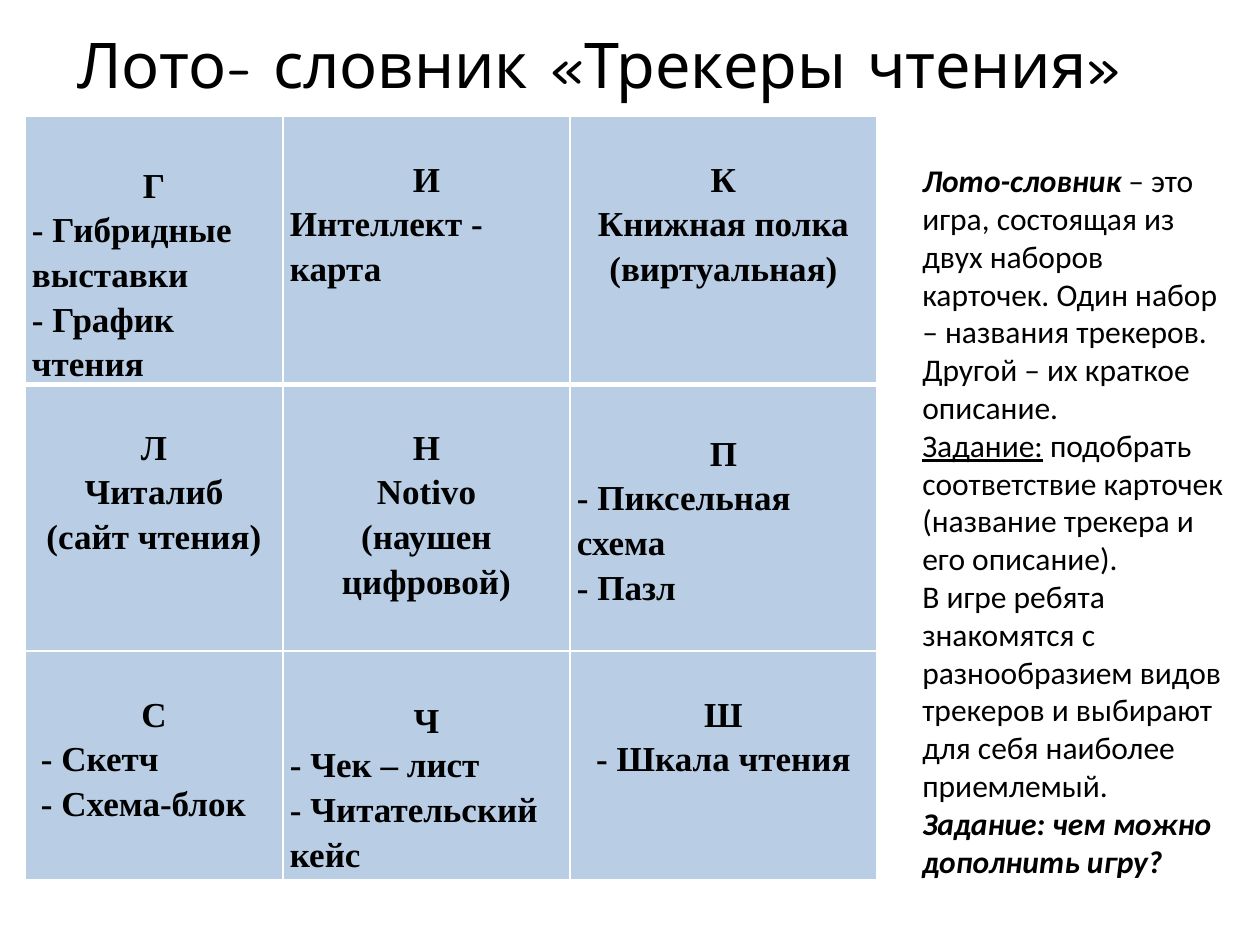
"""Builds the reading-tracker lotto slide with a word table and game rules."""
from lxml import etree
from pptx import Presentation
from pptx.dml import color
from pptx.enum import text
from pptx.oxml import ns
from pptx.util import Emu, Pt

SCALE = 914400 / 126
LEFT, CENTER = text.PP_ALIGN.LEFT, text.PP_ALIGN.CENTER
HIGH, LOW = 39, 45
COLUMNS = [258, 287, 307]
ROWS = [268, 267, 229]
WORDS = [
    [
        ("Г", ["- Гибридные выставки", "- График чтения"], LEFT, LOW, 0),
        ("И", ["Интеллект - карта"], LEFT, HIGH, 0),
        ("К", ["Книжная полка (виртуальная)"], CENTER, HIGH, 0),
    ],
    [
        ("Л", ["Читалиб", "(сайт чтения)"], CENTER, HIGH, 0),
        ("Н", ["Notivo", "(наушен цифровой)"], CENTER, HIGH, 0),
        ("П", ["- Пиксельная схема", "- Пазл"], LEFT, LOW, 0),
    ],
    [
        ("С", ["- Скетч", "- Схема-блок"], LEFT, HIGH, 9),
        ("Ч", ["- Чек – лист", "- Читательский кейс"], LEFT, LOW, 0),
        ("Ш", ["- Шкала чтения"], CENTER, HIGH, 0),
    ],
]
STRONG = {"bold": True, "italic": True}
RULES = [
    [
        ("Лото-словник", STRONG),
        (" – это игра, состоящая из двух наборов карточек. Один набор – "
         "названия трекеров. Другой – их краткое описание.", {}),
    ],
    [
        ("Задание:", {"underline": True}),
        (" подобрать соответствие карточек (название трекера и его описание).", {}),
    ],
    [("В игре ребята знакомятся с разнообразием видов трекеров и выбирают "
      "для себя наиболее приемлемый.", {})],
    [("Задание: чем можно дополнить игру?", STRONG)],
]


def px(length):
    """Turn pixels into EMU."""
    return Emu(round(length * SCALE))


def rgb(value):
    """Turn a hex string into a colour."""
    return color.RGBColor.from_string(value)


def apply(target, values):
    """Set every attribute named in a dict."""
    for name, value in values.items():
        setattr(target, name, value)


class LottoPage:
    """Holds the style and the slide being filled."""

    ink, tile, line = "000000", "B9CDE5", "FFFFFF"
    title_font = {"name": "Comic Neue", "size": Pt(36)}
    word_font = {"name": "Times New Roman", "size": Pt(20), "bold": True}
    rule_font = {"name": "Calibri", "size": Pt(18)}

    def __init__(self, deck):
        """Add a title-only slide."""
        self.page = deck.slides.add_slide(deck.slide_layouts[5])

    def add_span(self, para, content, font):
        """Add one formatted span to a paragraph."""
        span = para.add_run()
        span.text = content
        apply(span.font, font)
        span.font.color.rgb = rgb(self.ink)

    def paragraphs(self, frame, count):
        """Return the frame's paragraphs, extended to the count."""
        while len(frame.paragraphs) < count:
            frame.add_paragraph()
        return frame.paragraphs

    def title(self, content, left, top, width, height):
        """Move and fill the title placeholder."""
        box = self.page.shapes.title
        apply(box, {"left": px(left), "top": px(top), "width": px(width), "height": px(height)})
        apply(box.text_frame, {
            "auto_size": text.MSO_AUTO_SIZE.NONE,
            "vertical_anchor": text.MSO_ANCHOR.MIDDLE,
            "margin_right": px(59),
        })
        para = box.text_frame.paragraphs[0]
        para.alignment = CENTER
        self.add_span(para, content, self.title_font)

    def border(self, cell, side, width):
        """Draw one edge of a cell."""
        edge = etree.SubElement(cell._tc.get_or_add_tcPr(), ns.qn("a:" + side), w=str(Pt(width)))
        fill = etree.SubElement(edge, ns.qn("a:solidFill"))
        etree.SubElement(fill, ns.qn("a:srgbClr"), val=self.line)

    def cell(self, cell, row, entry):
        """Format a cell and add its letter and words."""
        letter, lines, alignment, top, indent = entry
        apply(cell, {
            "margin_left": px(7), "margin_right": px(7),
            "margin_top": px(top), "margin_bottom": 0,
        })
        thick = {(0, "lnB"), (1, "lnT")}
        for side in ("lnL", "lnR", "lnT", "lnB"):
            self.border(cell, side, 3 if (row, side) in thick else 1)
        cell.fill.solid()
        cell.fill.fore_color.rgb = rgb(self.tile)
        content = [letter] + lines
        for index, para in enumerate(self.paragraphs(cell.text_frame, len(content))):
            apply(para, {"alignment": alignment if index else CENTER, "line_spacing": 1.15})
            if index and indent:
                para._p.get_or_add_pPr().set("marL", str(px(indent)))
            self.add_span(para, content[index], self.word_font)

    def table(self, words, left, top, columns, rows):
        """Add the table of letters."""
        table = self.page.shapes.add_table(
            len(rows), len(columns), px(left), px(top), px(sum(columns)), px(sum(rows))
        ).table
        apply(table, {"first_row": False, "horz_banding": False})
        for column, width in zip(table.columns, columns):
            column.width = px(width)
        for row, height in enumerate(rows):
            table.rows[row].height = px(height)
            for column, entry in enumerate(words[row]):
                self.cell(table.cell(row, column), row, entry)

    def rules(self, content, left, top, width, height):
        """Add the text box with the rules."""
        box = self.page.shapes.add_textbox(px(left), px(top), px(width), px(height))
        apply(box.text_frame, {"word_wrap": True, "auto_size": text.MSO_AUTO_SIZE.SHAPE_TO_FIT_TEXT})
        for para, spans in zip(self.paragraphs(box.text_frame, len(content)), content):
            for words, font in spans:
                self.add_span(para, words, {**self.rule_font, **font})


def main():
    """Build and save the deck."""
    deck = Presentation()
    apply(deck, {"slide_width": px(1260), "slide_height": px(945)})
    lotto = LottoPage(deck)
    lotto.title("Лото- словник «Трекеры чтения»", 8, -19, 1230, 165)
    lotto.table(WORDS, 25, 116, COLUMNS, ROWS)
    lotto.rules(RULES, 910, 155, 328, 738)
    deck.save("out.pptx")


if __name__ == "__main__":
    main()
